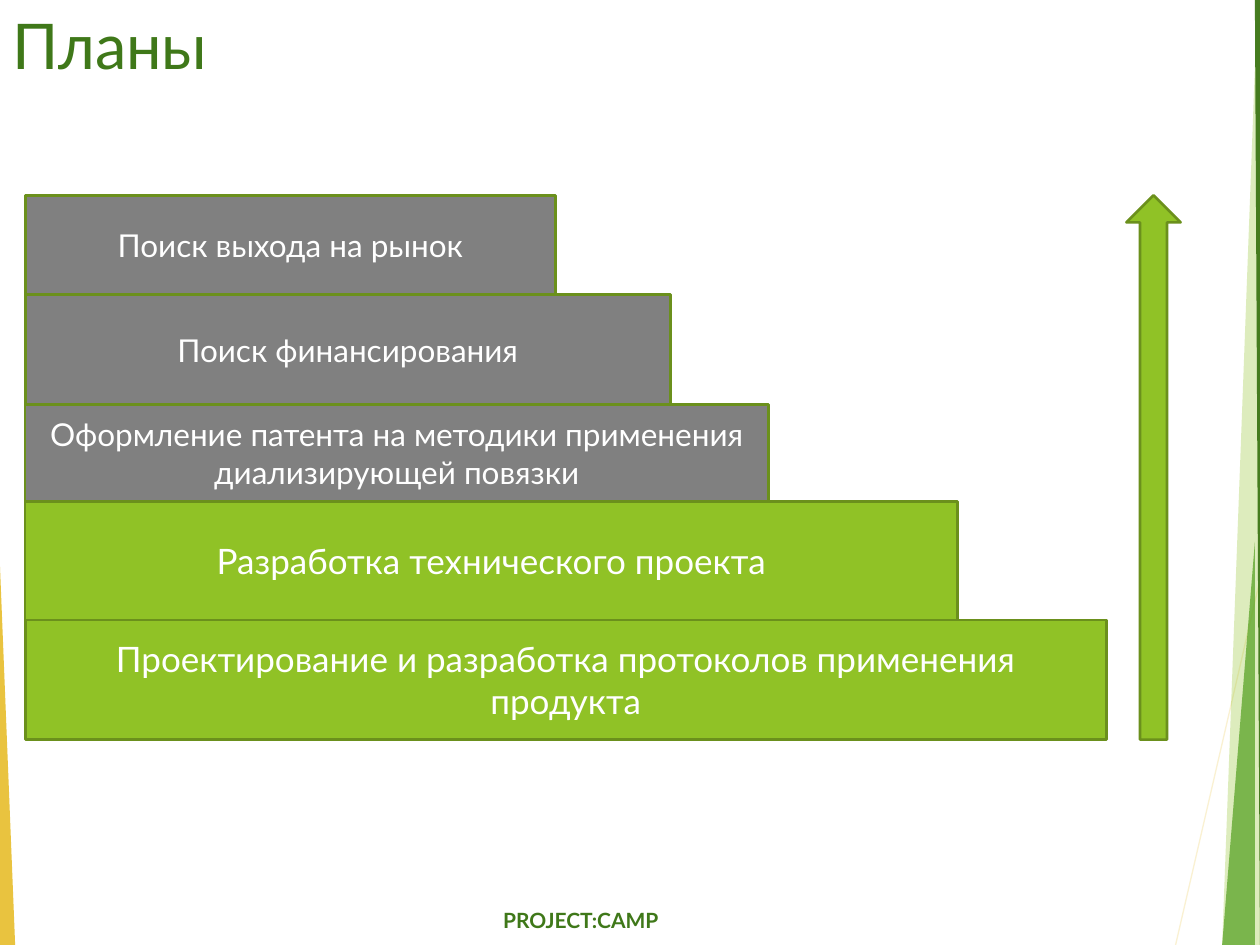
from lxml.etree import SubElement
from pptx import Presentation
from pptx.dml.color import RGBColor
from pptx.enum.shapes import MSO_CONNECTOR, MSO_SHAPE
from pptx.enum.text import MSO_ANCHOR, MSO_AUTO_SIZE, PP_ALIGN
from pptx.oxml.ns import qn
from pptx.util import Inches, Pt

FONT = "Lato"
WHITE = RGBColor(0xFF, 0xFF, 0xFF)
GOLD = RGBColor(0xE6, 0xB9, 0x1E)
CREAM = RGBColor(0xFA, 0xF1, 0xD2)
LIME = RGBColor(0x90, 0xC2, 0x26)
GREEN = RGBColor(0x54, 0xA0, 0x21)
DARK_GREEN = RGBColor(0x3F, 0x78, 0x19)
OLIVE = RGBColor(0x6B, 0x90, 0x1C)
GRAY = RGBColor(0x80, 0x80, 0x80)

TITLE = "Планы"
FOOTER = "PROJECT:CAMP"

# Steps from top to bottom: text, width, height, fill, text size
STEPS = [
    ("Поиск выхода на рынок", 4.21, 0.79, GRAY, 18),
    ("Поиск финансирования", 5.12, 0.87, GRAY, 18),
    ("Оформление патента на методики применения диализирующей повязки",
     5.9, 0.77, GRAY, 18),
    ("Разработка технического проекта", 7.4, 0.94, LIME, 20),
    ("Проектирование и разработка протоколов применения продукта",
     8.58, 0.95, LIME, 20),
]
STEPS_LEFT, STEPS_TOP = 0.2, 1.55
ARROW_LEFT, ARROW_WIDTH = 8.94, 0.43

# Edge decorations: corner points, fill, opacity in percent
GOLD_WEDGE = ([(0, 4.5), (0.12, 7.5), (0, 7.5)], GOLD, 85)
RIGHT_WEDGES = [
    ([(9.98, 0), (9.7, 7.5), (10, 7.5), (10, 0)], LIME, 30),
    ([(9.96, 4.3), (9.7, 7.5), (9.96, 7.5)], GREEN, 72),
    ([(9.96, 0), (10, 7.5), (10, 0)], DARK_GREEN, 96),
]


def write(frame, text, *, size, color, bold=False, align=PP_ALIGN.LEFT,
          anchor=MSO_ANCHOR.TOP, wrap=True):
    frame.word_wrap = wrap
    if not wrap:
        frame.auto_size = MSO_AUTO_SIZE.SHAPE_TO_FIT_TEXT
    frame.vertical_anchor = anchor
    para = frame.paragraphs[0]
    para.alignment = align
    span = para.add_run()
    span.text = text
    span.font.name = FONT
    span.font.size = Pt(size)
    span.font.bold = bold
    span.font.color.rgb = color


def paint(shape, fill, outline=None):
    shape.shadow.inherit = False
    shape.fill.solid()
    shape.fill.fore_color.rgb = fill
    if outline is None:
        shape.line.fill.background()
    else:
        shape.line.color.rgb = outline
        shape.line.width = Pt(1.5)


def add_wedge(shapes, points, color, opacity):
    corners = [(Inches(x), Inches(y)) for x, y in points]
    builder = shapes.build_freeform(*corners[0], scale=1.0)
    builder.add_line_segments(corners[1:], close=True)
    wedge = builder.convert_to_shape()
    paint(wedge, color)
    tint = wedge._element.spPr.find(f"{qn('a:solidFill')}/{qn('a:srgbClr')}")
    SubElement(tint, qn("a:alpha"), val=str(opacity * 1000))


def add_edges(shapes):
    add_wedge(shapes, *GOLD_WEDGE)
    ray = shapes.add_connector(MSO_CONNECTOR.STRAIGHT, Inches(9.33), Inches(7.5),
                               Inches(10), Inches(4.6))
    ray.line.color.rgb = CREAM
    ray.line.width = Pt(0.75)
    SubElement(ray._element.spPr, qn("a:effectLst"))
    for wedge in RIGHT_WEDGES:
        add_wedge(shapes, *wedge)


def add_steps(shapes):
    """Stack the steps without gaps and return the bottom of the stack."""
    top = STEPS_TOP
    for text, width, height, fill, size in STEPS:
        step = shapes.add_shape(MSO_SHAPE.RECTANGLE, Inches(STEPS_LEFT), Inches(top),
                                Inches(width), Inches(height))
        paint(step, fill, OLIVE)
        write(step.text_frame, text, size=size, color=WHITE,
              align=PP_ALIGN.CENTER, anchor=MSO_ANCHOR.MIDDLE)
        top += height
    return top


def main():
    deck = Presentation()
    deck.slide_width, deck.slide_height = Inches(10), Inches(7.5)
    slide = deck.slides.add_slide(deck.slide_layouts[5])
    shapes = slide.shapes

    title = shapes.title
    title.left, title.top = Inches(0), Inches(0)
    title.width, title.height = Inches(10), Inches(1.44)
    write(title.text_frame, TITLE, size=36, color=DARK_GREEN)

    add_edges(shapes)
    footer = shapes.add_textbox(Inches(3.81), Inches(7.15), Inches(1.6), Inches(0.3))
    write(footer.text_frame, FOOTER, size=12, color=DARK_GREEN, bold=True,
          align=PP_ALIGN.CENTER, wrap=False)

    bottom = add_steps(shapes)
    arrow = shapes.add_shape(MSO_SHAPE.UP_ARROW, Inches(ARROW_LEFT), Inches(STEPS_TOP),
                             Inches(ARROW_WIDTH), Inches(bottom - STEPS_TOP))
    paint(arrow, LIME, OLIVE)
    deck.save("out.pptx")


if __name__ == "__main__":
    main()
